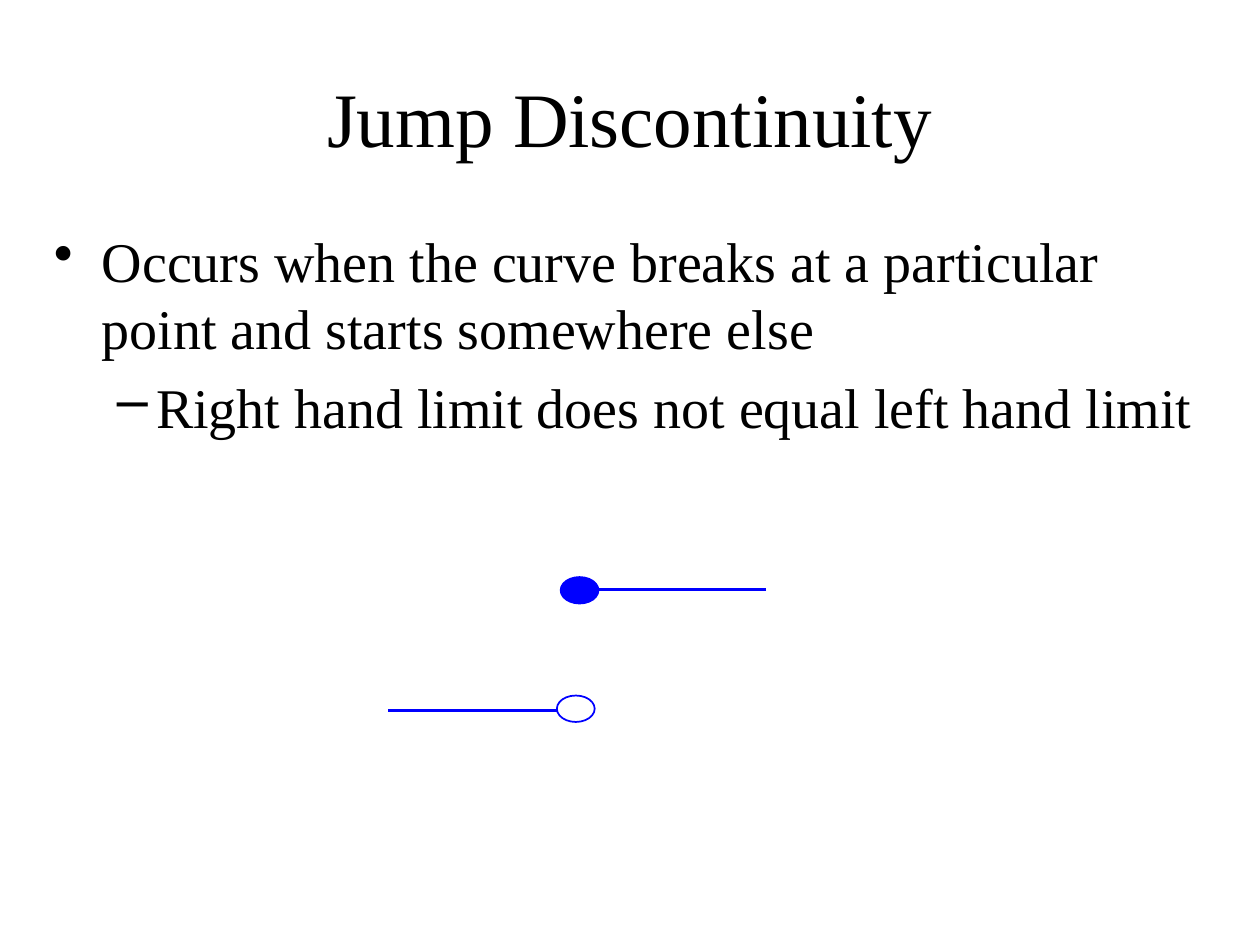
import pptx
import pptx.dml.color
import pptx.enum.shapes
import pptx.enum.text
import pptx.oxml.ns
import pptx.util
from dataclasses import dataclass
from lxml import etree

Inches = pptx.util.Inches
Pt = pptx.util.Pt
RGB = pptx.dml.color.RGBColor


@dataclass(frozen=True)
class Theme:
    font: str = "Times New Roman"
    ink: RGB = RGB(0, 0, 0)
    blue: RGB = RGB(0, 0, 255)
    title: float = 44
    body: float = 32
    gap: float = 6.4
    curve: float = 2
    ring: float = 1


THEME = Theme()


def add_box(slide, left, top, width, height):
    box = slide.shapes.add_textbox(*map(Inches, (left, top, width, height)))
    box.text_frame.word_wrap = True
    return box.text_frame


def add_run(para, text, size):
    run = para.add_run()
    run.text = text
    run.font.name = THEME.font
    run.font.size = Pt(size)
    run.font.color.rgb = THEME.ink


def add_bullet(para, mark, text, level, left, hang):
    para.level = level
    para.space_before = Pt(THEME.gap)
    props = para._p.get_or_add_pPr()
    props.set("marL", str(Inches(left)))
    props.set("indent", str(-Inches(hang)))
    bullet = etree.SubElement(props, pptx.oxml.ns.qn("a:buChar"))
    bullet.set("char", mark)
    add_run(para, text, THEME.body)


def add_line(slide, start, end, y):
    kind = pptx.enum.shapes.MSO_CONNECTOR.STRAIGHT
    line = slide.shapes.add_connector(kind, *map(Inches, (start, y, end, y)))
    line.line.color.rgb = THEME.blue
    line.line.width = Pt(THEME.curve)
    etree.SubElement(line._element.spPr, pptx.oxml.ns.qn("a:effectLst"))


def add_dot(slide, left, top, solid):
    kind = pptx.enum.shapes.MSO_SHAPE.OVAL
    dot = slide.shapes.add_shape(kind, *map(Inches, (left, top, 0.3, 0.21)))
    dot.shadow.inherit = False
    dot.line.color.rgb = THEME.blue
    dot.line.width = Pt(THEME.ring)
    if solid:
        dot.fill.solid()
        dot.fill.fore_color.rgb = THEME.blue
    else:
        dot.fill.background()


def main():
    deck = pptx.Presentation()
    deck.slide_width, deck.slide_height = Inches(10), Inches(7.5)
    slide = deck.slides.add_slide(deck.slide_layouts[6])

    # Title
    title = add_box(slide, 0.5, 0.3, 9, 1.25)
    title.vertical_anchor = pptx.enum.text.MSO_ANCHOR.MIDDLE
    head = title.paragraphs[0]
    head.alignment = pptx.enum.text.PP_ALIGN.CENTER
    add_run(head, "Jump Discontinuity", THEME.title)

    # Definition
    body = add_box(slide, 0.33, 1.75, 9.42, 1.92)
    add_bullet(body.paragraphs[0], "•",
               "Occurs when the curve breaks at a particular point and starts somewhere else",
               0, 0.38, 0.38)
    add_bullet(body.add_paragraph(), "–",
               "Right hand limit does not equal left hand limit", 1, 0.81, 0.31)

    # Left branch, open end
    add_line(slide, 3.08, 4.42, 5.64)
    add_dot(slide, 4.42, 5.52, solid=False)

    # Right branch, closed end
    add_line(slide, 6.08, 4.75, 4.68)
    add_dot(slide, 4.45, 4.58, solid=True)

    deck.save("out.pptx")


if __name__ == "__main__":
    main()
